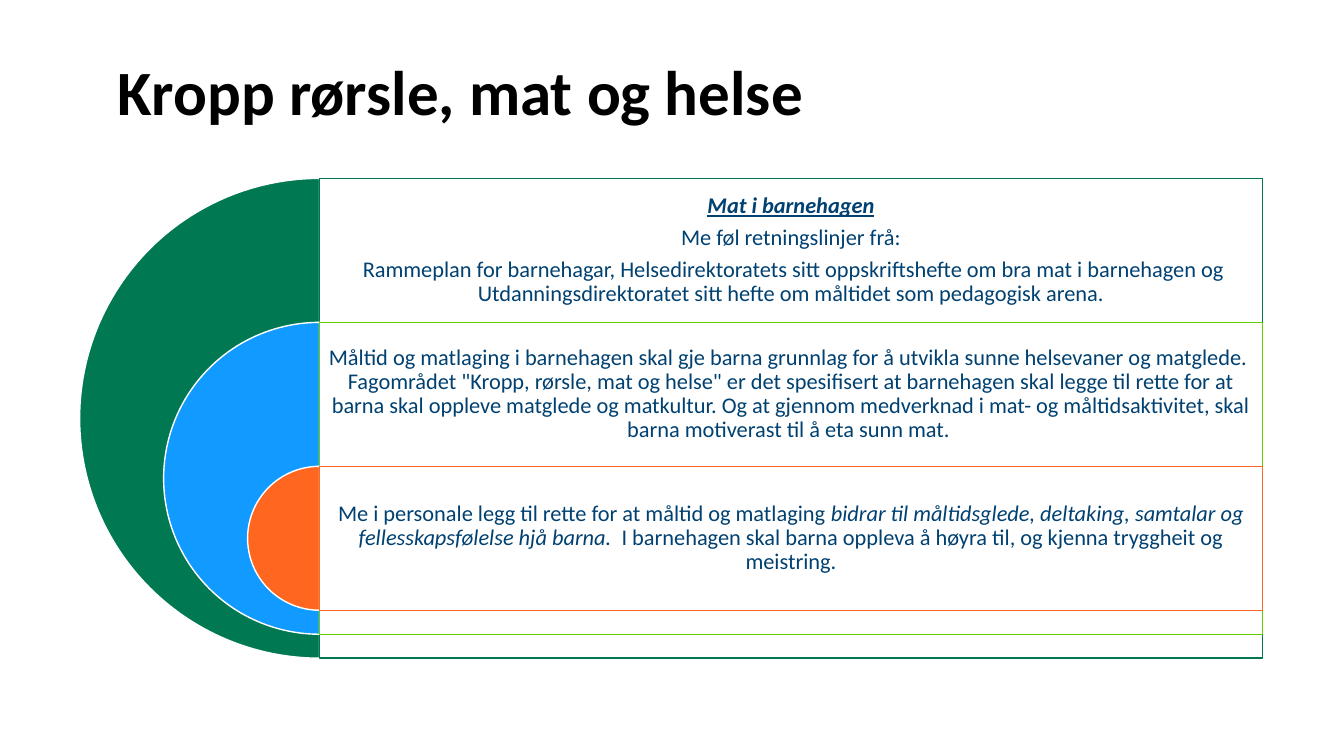
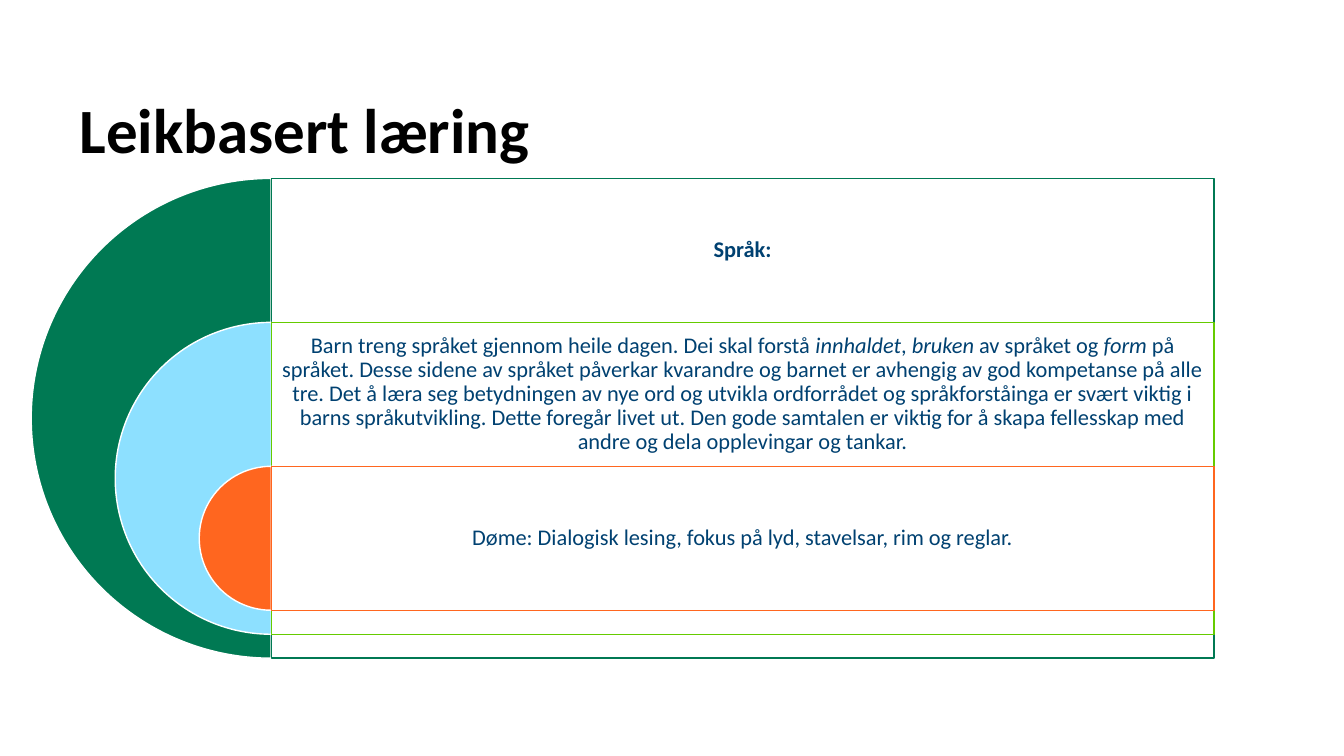
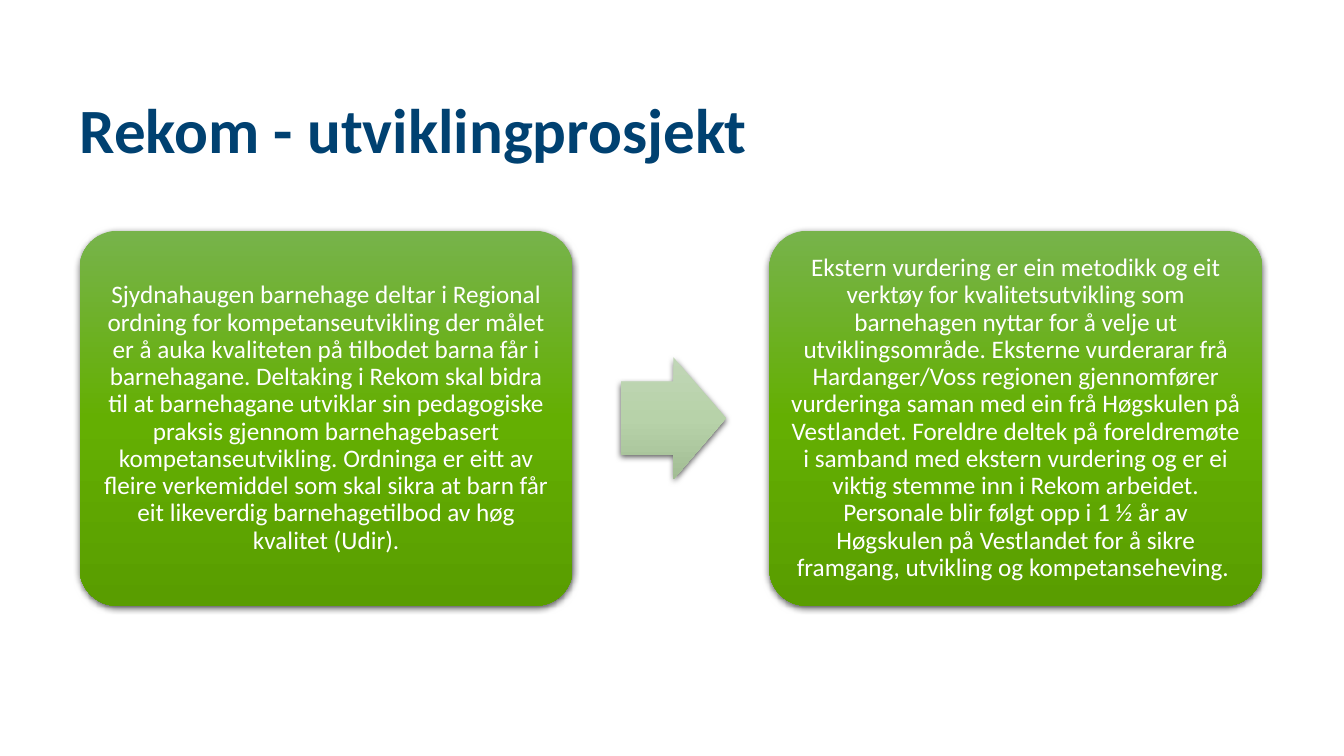
"""Builds three kindergarten slides: two nested-arc lists and one two-step flow."""
from pptx import Presentation
from pptx import util as u
from pptx.dml.color import RGBColor
from pptx.enum import shapes, text
from pptx.oxml import parse_xml
from pptx.oxml.ns import nsdecls, qn

WIDE, HIGH = 13.33, 7.5
FONT = "Calibri"
HUES = {
    "black": "000000", "white": "FFFFFF", "navy": "004171", "green": "007953",
    "lime": "65CB00", "blue": "119AFF", "sky": "8DE0FF", "orange": "FF661F",
}
CARD = ("77B34B", "64AF02", "599D00")
ARROW = ("C0D6B6", "B7D2A9", "A2BD94")
KIND = shapes.MSO_SHAPE
TOP, DISC, STEP = 1.77, 4.76, 0.3
BAND = 9.35
PAD = 0.07
EDGES = ("green", "lime", "orange")

ARCS = [
    {
        "title": "Kropp rørsle, mat og helse",
        "spot": (1.17, 0.61, 11, 0.72),
        "axis": 3.17,
        "fills": ("green", "blue", "orange"),
        "rows": [
            [
                [("Mat i barnehagen", "biu")],
                [("Me føl retningslinjer frå:", "")],
                [(" Rammeplan for barnehagar, Helsedirektoratets sitt oppskriftshefte om bra mat i "
                  "barnehagen og Utdanningsdirektoratet sitt hefte om måltidet som pedagogisk arena.", "")],
            ],
            [[
                ("Måltid og matlaging i barnehagen skal gje barna grunnlag for å utvikla sunne "
                 "helsevaner og matglede. \n", ""),
                ("Fagområdet \"Kropp, rørsle, mat og helse\" er det spesifisert at barnehagen skal "
                 "legge til rette for at barna skal oppleve matglede og matkultur. Og at gjennom "
                 "medverknad i mat- og måltidsaktivitet, skal barna motiverast til å eta sunn mat. ", ""),
            ]],
            [[
                ("Me i personale legg til rette for at måltid og matlaging ", ""),
                ("bidrar til måltidsglede, deltaking, samtalar og fellesskapsfølelse hjå barna.", "i"),
                ("  I barnehagen skal barna oppleva å høyra til, og kjenna tryggheit og meistring.", ""),
            ]],
        ],
    },
    {
        "title": "Leikbasert læring",
        "spot": (0.79, 0.98, 11.73, 0.79),
        "axis": 2.69,
        "fills": ("green", "sky", "orange"),
        "rows": [
            [[("Språk:", "b")]],
            [[
                ("Barn treng språket gjennom heile dagen. Dei skal forstå ", ""),
                ("innhaldet", "i"),
                (", ", ""),
                ("bruken", "i"),
                (" av språket og ", ""),
                ("form", "i"),
                (" på språket. Desse sidene av språket påverkar kvarandre og barnet er avhengig av "
                 "god kompetanse på alle tre. Det å læra seg betydningen av nye ord og utvikla "
                 "ordforrådet og språkforståinga er svært viktig i barns språkutvikling. Dette foregår "
                 "livet ut. Den gode samtalen er viktig for å skapa fellesskap med andre og dela "
                 "opplevingar og tankar.", ""),
            ]],
            [[("Døme: Dialogisk lesing, fokus på lyd, stavelsar, rim og reglar.", "")]],
        ],
    },
]

FLOW = {
    "title": "Rekom - utviklingprosjekt",
    "spot": (0.79, 0.98, 11.73, 0.79),
    "cards": [
        "Sjydnahaugen barnehage deltar i Regional ordning for kompetanseutvikling der målet er å auka "
        "kvaliteten på tilbodet barna får i barnehagane. Deltaking i Rekom skal bidra til at "
        "barnehagane utviklar sin pedagogiske praksis gjennom barnehagebasert kompetanseutvikling. "
        "Ordninga er eitt av fleire verkemiddel som skal sikra at barn får eit likeverdig "
        "barnehagetilbod av høg kvalitet (Udir).",
        "Ekstern vurdering er ein metodikk og eit verktøy for kvalitetsutvikling som barnehagen "
        "nyttar for å velje ut utviklingsområde. Eksterne vurderarar frå Hardanger/Voss regionen "
        "gjennomfører vurderinga saman med ein frå Høgskulen på Vestlandet. Foreldre deltek på "
        "foreldremøte i samband med ekstern vurdering og er ei viktig stemme inn i Rekom arbeidet. "
        "Personale blir følgt opp i 1 ½ år av Høgskulen på Vestlandet for å sikre framgang, utvikling "
        "og kompetanseheving. ",
    ],
}


def rgb(hue):
    return RGBColor.from_string(HUES[hue])


def inset(frame, pad, base=None):
    frame.margin_left = frame.margin_right = frame.margin_top = u.Inches(pad)
    frame.margin_bottom = u.Inches(pad if base is None else base)
    frame.word_wrap = True


def style(run, size, hue, marks=""):
    font = run.font
    font.name, font.size, font.color.rgb = FONT, u.Pt(size), rgb(hue)
    font.bold, font.italic, font.underline = ("b" in marks, "i" in marks, "u" in marks)


def write(shape, paras, size, hue, base=None):
    frame = shape.text_frame
    inset(frame, PAD, base)
    frame.vertical_anchor = text.MSO_ANCHOR.MIDDLE
    for i, runs in enumerate(paras):
        para = frame.add_paragraph() if i else frame.paragraphs[0]
        para.alignment = text.PP_ALIGN.CENTER
        para.line_spacing = 0.9
        para.space_after = u.Pt(0.35 * size)
        for words, marks in runs:
            run = para.add_run()
            run.text = words.rstrip("\n")
            style(run, size, hue, marks)
            if words.endswith("\n"):
                para.add_line_break()


def start(deck, data):
    slide = deck.slides.add_slide(deck.slide_layouts[5])
    head = slide.shapes.title
    head.left, head.top, head.width, head.height = map(u.Inches, data["spot"])
    frame = head.text_frame
    inset(frame, 0)
    frame.auto_size = text.MSO_AUTO_SIZE.NONE
    frame.vertical_anchor = text.MSO_ANCHOR.TOP
    para = frame.paragraphs[0]
    para.alignment, para.line_spacing = text.PP_ALIGN.LEFT, 0.9
    run = para.add_run()
    run.text = data["title"]
    style(run, 45, data.get("hue", "black"), "b")
    return slide


def place(slide, kind, box, adj=()):
    shape = slide.shapes.add_shape(kind, *map(u.Inches, box))
    shape.shadow.inherit = False
    for i, value in enumerate(adj):
        shape.adjustments[i] = value
    return shape


def paint(shape, fill, edge):
    shape.fill.solid()
    shape.fill.fore_color.rgb = rgb(fill)
    shape.line.color.rgb = rgb(edge)
    shape.line.width = u.Pt(1)


def glow(shape, tones):
    shape.line.fill.background()
    shape.fill.background()
    props = shape._element.spPr
    stops = "".join(
        f'<a:gs pos="{i * 50000}"><a:srgbClr val="{tone}"/></a:gs>' for i, tone in enumerate(tones))
    props.replace(props.find(qn("a:noFill")), parse_xml(
        f'<a:gradFill {nsdecls("a")}><a:gsLst>{stops}</a:gsLst><a:lin ang="5400000"/></a:gradFill>'))
    props.find(qn("a:effectLst")).append(parse_xml(
        f'<a:outerShdw {nsdecls("a")} blurRad="{u.Pt(4.5)}" dist="{u.Pt(1.5)}" dir="5400000" '
        f'rotWithShape="0"><a:srgbClr val="{HUES["black"]}"><a:alpha val="63000"/></a:srgbClr>'
        '</a:outerShdw>'))


def arcs(deck, data):
    slide = start(deck, data)
    axis, row = data["axis"], DISC * STEP
    for i, (fill, edge, paras) in enumerate(zip(data["fills"], EDGES, data["rows"])):
        size, top = DISC * (1 - 0.35 * i), TOP + i * row
        paint(place(slide, KIND.PIE, (axis - size / 2, top, size, size), (54, 162)), fill, "white")
        band = place(slide, KIND.RECTANGLE, (axis, top, BAND, size))
        paint(band, "white", edge)
        tint = band._element.spPr.find(qn("a:solidFill"))[0]
        tint.append(parse_xml(f'<a:alpha {nsdecls("a")} val="90000"/>'))
        write(band, paras, 16, "navy", size - row + PAD)


def flow(deck, data):
    slide = start(deck, {**data, "hue": "navy"})
    wide, high, top, side = 4.89, 3.72, 2.29, 0.79
    first, last = data["cards"]

    def card(left, words):
        shape = place(slide, KIND.ROUNDED_RECTANGLE, (left, top, wide, high), (0.1,))
        glow(shape, CARD)
        write(shape, [[(words, "")]], 18, "white")

    card(side, first)
    tall = 1.21
    glow(place(slide, KIND.RIGHT_ARROW, (6.16, top + (high - tall) / 2, 1.04, tall), (0.6, 0.5)), ARROW)
    card(WIDE - side - wide - 0.02, last)


def main():
    deck = Presentation()
    deck.slide_width, deck.slide_height = u.Inches(WIDE), u.Inches(HIGH)
    for data in ARCS:
        arcs(deck, data)
    flow(deck, FLOW)
    deck.save("out.pptx")


if __name__ == "__main__":
    main()
